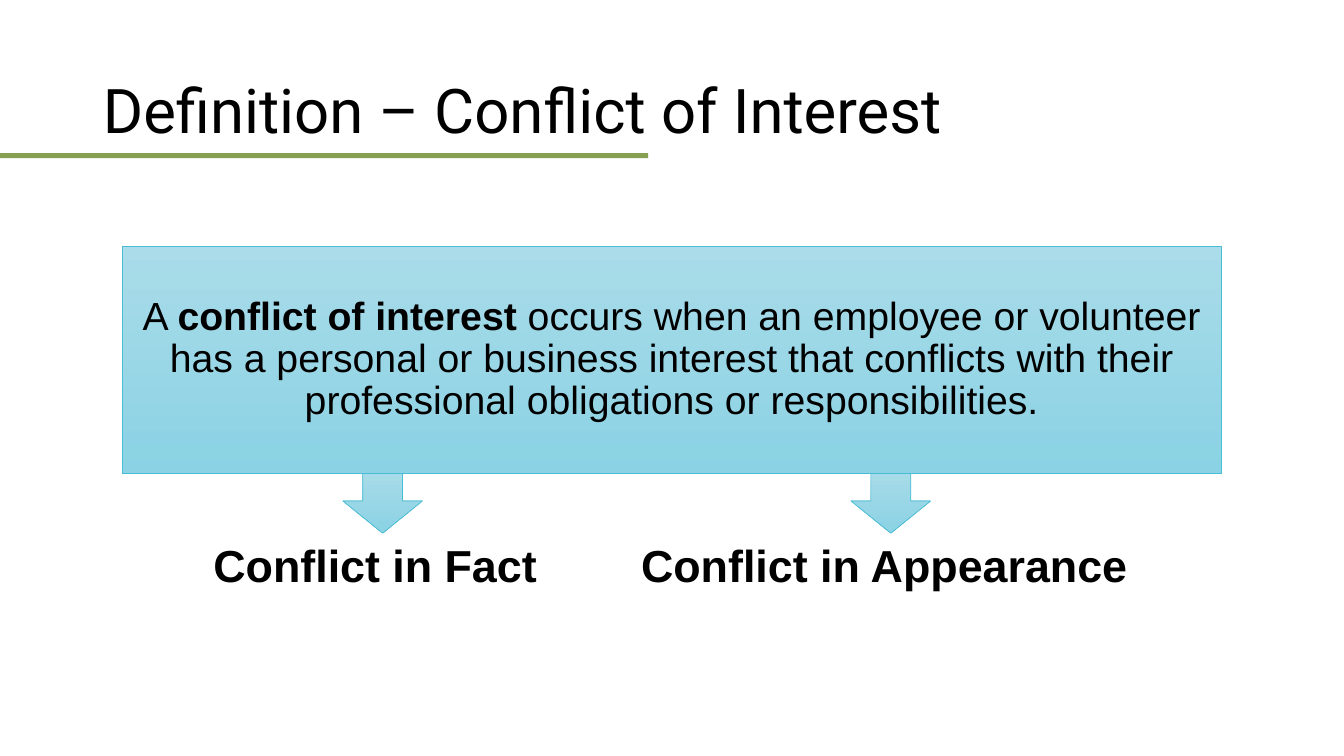
from pptx import Presentation
from pptx.dml.color import RGBColor
from pptx.enum.shapes import MSO_SHAPE as SHAPE
from pptx.enum.text import MSO_ANCHOR as ANCHOR, MSO_AUTO_SIZE as FIT, PP_ALIGN as ALIGN
from pptx.util import Inches, Pt
from lxml import etree

BLACK = RGBColor(0x00, 0x00, 0x00)
GREEN = RGBColor(0x85, 0xA0, 0x51)
AQUA_LIGHT = RGBColor(0xAA, 0xDC, 0xE9)
AQUA_DARK = RGBColor(0x8A, 0xD2, 0xE4)
AQUA_LINE = RGBColor(0x48, 0xBD, 0xD4)
NS = "{http://schemas.openxmlformats.org/drawingml/2006/main}"


class SlideBuilder:
    """Holds the style and the current slide."""
    title_font = "Roboto"
    text_font = "Arial"

    def __init__(self, s):
        self.s = s

    def add_text(self, sp, runs, size, font, align, spacing=1.0):
        tf = sp.text_frame
        tf.word_wrap = True
        p = tf.paragraphs[0]
        p.alignment, p.line_spacing, p.space_before = align, spacing, Pt(0)
        for text, bold in runs:
            r = p.add_run()
            r.text = text
            r.font.name, r.font.size, r.font.bold = font, Pt(size), bold
            r.font.color.rgb = BLACK
        return tf

    def aqua(self, sp):
        sp.fill.gradient()
        sp.fill.gradient_angle = 270
        for stop, color in zip(sp.fill.gradient_stops, (AQUA_LIGHT, AQUA_DARK)):
            stop.color.rgb = color
        sp.line.color.rgb = AQUA_LINE
        sp.line.width = Pt(0.5)

    def shape(self, kind, x, y, w, h):
        sp = self.s.shapes.add_shape(kind, Inches(x), Inches(y), Inches(w), Inches(h))
        sp.shadow.inherit = False
        return sp

    def rule(self, x, y, w, h):
        sp = self.shape(SHAPE.RECTANGLE, x, y, w, h)
        sp.fill.solid()
        sp.fill.fore_color.rgb = GREEN
        sp.line.fill.background()

    def arrow(self, x, y, w, h):
        self.aqua(self.shape(SHAPE.DOWN_ARROW, x, y, w, h))

    def placeholder(self, idx, x, y, w, h):
        sp = self.s.placeholders[idx]
        sp.left, sp.top, sp.width, sp.height = map(Inches, (x, y, w, h))
        # Bring in front of the shapes added so far
        sp.element.getparent().append(sp.element)
        sp.text_frame.auto_size = FIT.NONE
        sp.text_frame.vertical_anchor = ANCHOR.MIDDLE
        return sp

    def title(self, text, *box):
        sp = self.placeholder(0, *box)
        self.add_text(sp, [(text, False)], 44, self.title_font, ALIGN.LEFT, 0.9)

    def definition(self, runs, *box):
        sp = self.placeholder(1, *box)
        self.aqua(sp)
        tf = self.add_text(sp, runs, 28, self.text_font, ALIGN.CENTER, 0.9)
        pPr = tf.paragraphs[0]._p.get_or_add_pPr()
        pPr.set("marL", "0")
        pPr.set("indent", "0")
        etree.SubElement(pPr, NS + "buNone")

    def label(self, text, x, y, w, h):
        sp = self.s.shapes.add_textbox(Inches(x), Inches(y), Inches(w), Inches(h))
        tf = self.add_text(sp, [(text, True)], 32, self.text_font, ALIGN.CENTER)
        tf.auto_size = FIT.SHAPE_TO_FIT_TEXT


def main():
    prs = Presentation()
    prs.slide_width, prs.slide_height = Inches(13.33), Inches(7.5)
    b = SlideBuilder(prs.slides.add_slide(prs.slide_layouts[1]))

    # Rule under the title
    b.rule(0, 1.52, 6.43, 0.05)

    # Two kinds of conflict, each below its arrow
    for text, arrow_x, label_x in (("Conflict in Fact ", 3.4, 1.05),
                                   ("Conflict in Appearance ", 8.44, 6.1)):
        b.arrow(arrow_x, 4.65, 0.79, 0.64)
        b.label(text, label_x, 5.29, 5.47, 0.64)

    # Title and definition box
    b.title("Definition – Conflict of Interest", 0.92, 0.4, 11.5, 1.45)
    b.definition([
        ("A ", False),
        ("conflict of interest ", True),
        ("occurs when an employee or volunteer has a personal or business interest "
         "that conflicts with their professional obligations or responsibilities.", False),
    ], 1.21, 2.44, 10.9, 2.26)

    prs.save("out.pptx")


if __name__ == "__main__":
    main()
